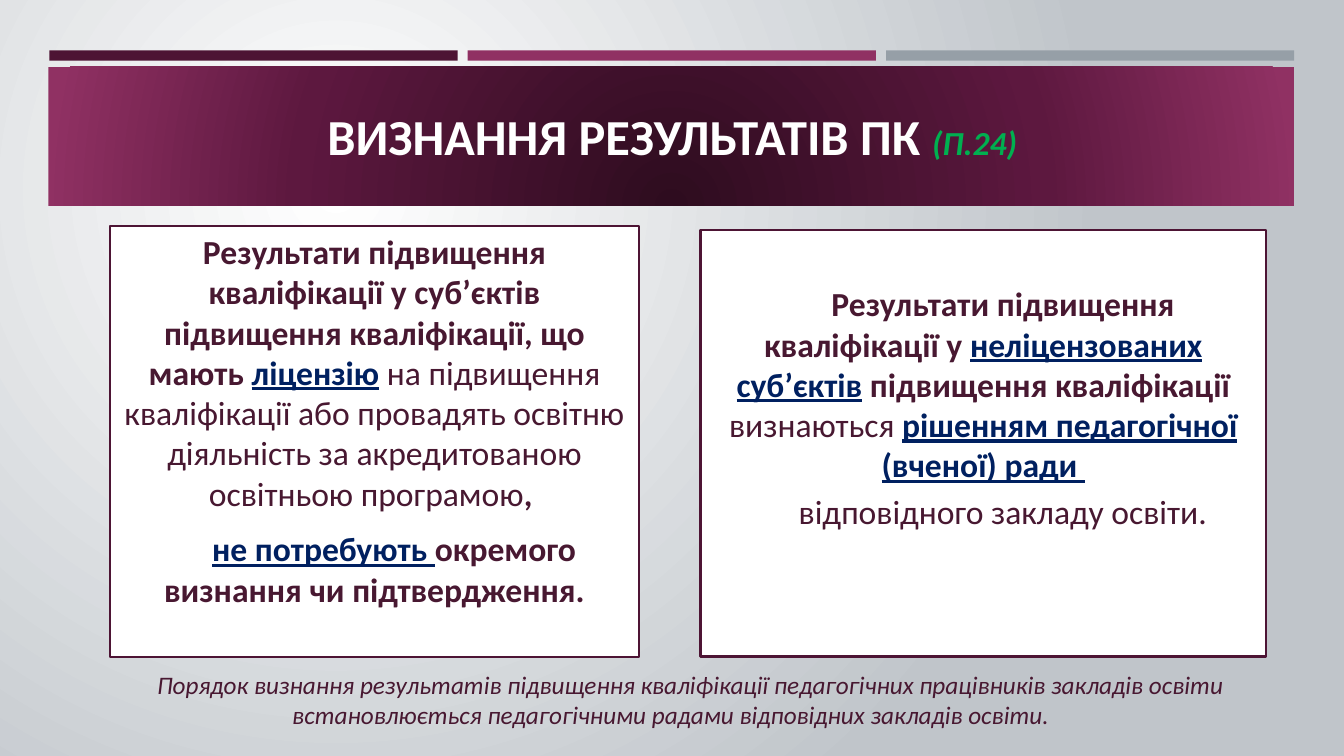
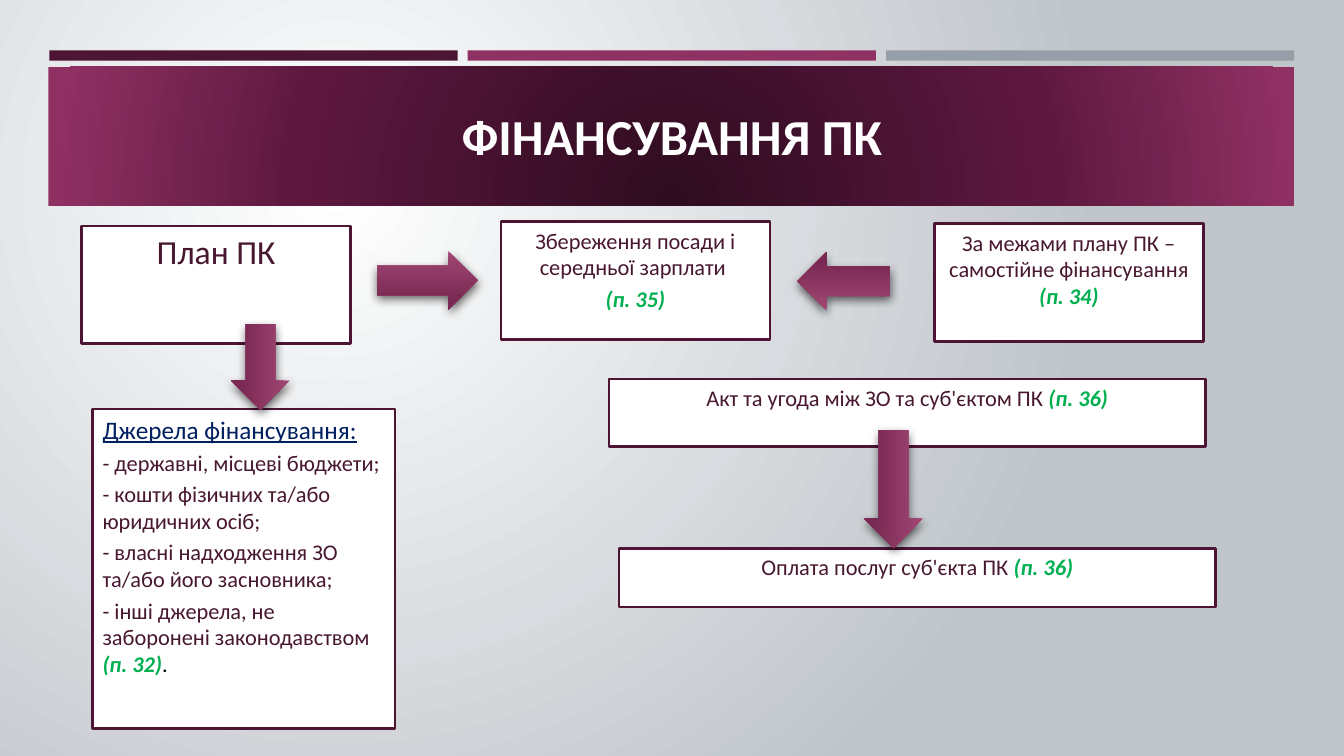
from dataclasses import dataclass

from lxml.etree import SubElement
from pptx import Presentation
from pptx.dml.color import RGBColor
from pptx.enum.shapes import MSO_SHAPE as SHAPE
from pptx.enum.text import MSO_ANCHOR as ANCHOR, PP_ALIGN as ALIGN
from pptx.oxml.ns import qn
from pptx.util import Pt

WHITE = RGBColor(0xFF, 0xFF, 0xFF)
BLACK = RGBColor(0x00, 0x00, 0x00)
SILVER = RGBColor(0xC0, 0xC5, 0xCA)
STEEL = RGBColor(0x96, 0x9F, 0xA7)
WINE = RGBColor(0x4D, 0x14, 0x34)
BERRY = RGBColor(0x90, 0x31, 0x63)
NIGHT = RGBColor(0x2E, 0x0C, 0x1F)
PLUM = RGBColor(0x5D, 0x18, 0x3F)
ROSE = RGBColor(0xA2, 0x47, 0x74)
MULBERRY = RGBColor(0x79, 0x29, 0x53)
TEXT = RGBColor(0x48, 0x18, 0x31)
NAVY = RGBColor(0x00, 0x20, 0x60)
GREEN = RGBColor(0x00, 0xB0, 0x50)


@dataclass(frozen=True)
class Ink:
    color: RGBColor
    bold: bool = False
    italic: bool = False
    underline: bool = False
    size: float = 0


PLAIN = Ink(TEXT)
BOLD = Ink(TEXT, bold=True)
ITALIC = Ink(TEXT, italic=True)
KEY = Ink(NAVY, bold=True, underline=True)
HEADING = Ink(NAVY, underline=True, size=18)
CLAUSE = Ink(GREEN, bold=True, italic=True)
TITLE = Ink(WHITE, bold=True)
TITLE_CLAUSE = Ink(GREEN, bold=True, italic=True, size=24)
PERIOD = Ink(BLACK)


class Deck:
    font = "Calibri"
    first_indent = 28

    def __init__(self):
        self.prs = Presentation()
        self.prs.slide_width, self.prs.slide_height = Pt(960), Pt(540)
        self.layout = self.prs.slide_layouts[5]
        self.slide = None
        master = self.prs.slide_master
        master.background.fill.background()
        self.gradient(master.element, [(0, WHITE), (100, SILVER)], focus=(50, 50, 100, 100))
        heading = self.layout.placeholders[0]
        heading.left, heading.top = Pt(46), Pt(57.6)
        heading.width, heading.height = Pt(868.3), Pt(77.8)
        heading.text_frame.vertical_anchor = ANCHOR.MIDDLE

    def gradient(self, holder, stops, focus=None, angle=0):
        blank = next(holder.iter(qn("a:noFill")))
        fill = blank.makeelement(qn("a:gradFill"), {"rotWithShape": "1"})
        stop_list = SubElement(fill, qn("a:gsLst"))
        for position, color in stops:
            stop = SubElement(stop_list, qn("a:gs"), pos=str(position * 1000))
            SubElement(stop, qn("a:srgbClr"), val=str(color))
        if focus:
            circle = SubElement(fill, qn("a:path"), {"path": "circle"})
            edges = {side: str(value * 1000) for side, value in zip("ltrb", focus)}
            SubElement(circle, qn("a:fillToRect"), edges)
        else:
            SubElement(fill, qn("a:lin"), ang=str(angle * 60000), scaled="0")
        blank.getparent().replace(blank, fill)

    def shape(self, kind, left, top, width, height, color=None):
        shape = self.slide.shapes.add_shape(kind, Pt(left), Pt(top), Pt(width), Pt(height))
        shape.shadow.inherit = False
        if color is None:
            shape.fill.background()
        else:
            shape.fill.solid()
            shape.fill.fore_color.rgb = color
        shape.line.fill.background()
        return shape

    def decorate_layout(self):
        parts = [
            self.shape(SHAPE.RECTANGLE, 35.28 + 298.8 * column, 36, 291.6, 7.4, color)
            for column, color in enumerate((WINE, BERRY, STEEL))
        ]
        band = self.shape(SHAPE.RECTANGLE, 34.6, 47.5, 890, 99.4)
        self.gradient(band.element, [(0, NIGHT), (60, PLUM), (100, BERRY)], focus=(50, 130, 50, -30))
        for number, part in enumerate(parts + [band], 100):
            part.element.nvSpPr.cNvPr.set("id", str(number))
            self.layout.element.cSld.spTree.append(part.element)

    def add_slide(self, *title_runs):
        first = self.slide is None
        self.slide = self.prs.slides.add_slide(self.layout)
        if first:
            self.decorate_layout()
        self.set_text(self.slide.shapes.title.text_frame, [title_runs], 36, spacing=False)

    def set_text(self, frame, paragraphs, size, align=ALIGN.CENTER, after=0, indented=(), spacing=True):
        frame.word_wrap = True
        for index, runs in enumerate(paragraphs):
            paragraph = frame.paragraphs[0] if index == 0 else frame.add_paragraph()
            paragraph.alignment = align
            if spacing:
                paragraph.space_before = Pt(size * 0.2)
                paragraph.space_after = Pt(after)
            if index in indented:
                paragraph._p.get_or_add_pPr().set("indent", str(Pt(self.first_indent)))
            for words, ink in runs:
                run = paragraph.add_run()
                run.text = words
                font = run.font
                font.name, font.size = self.font, Pt(ink.size or size)
                font.color.rgb = ink.color
                font.bold, font.italic, font.underline = ink.bold, ink.italic, ink.underline

    def box(self, left, top, width, height, paragraphs, size=16, inset=3.6, **style):
        box = self.shape(SHAPE.RECTANGLE, left, top, width, height, WHITE)
        box.line.color.rgb = WINE
        box.line.width = Pt(1.75)
        box.text_frame.vertical_anchor = ANCHOR.TOP
        box.text_frame.margin_top = Pt(inset)
        self.set_text(box.text_frame, paragraphs, size, **style)

    def note(self, left, top, width, height, paragraphs, size, **style):
        note = self.slide.shapes.add_textbox(Pt(left), Pt(top), Pt(width), Pt(height))
        self.set_text(note.text_frame, paragraphs, size, **style)

    def arrow(self, left, top, length, rotation=0):
        arrow = self.shape(SHAPE.RIGHT_ARROW, left, top, length, 42)
        arrow.rotation = rotation
        self.gradient(arrow.element, [(0, ROSE), (84, MULBERRY)], angle=90)
        effects = next(arrow.element.iter(qn("a:effectLst")))
        shadow = SubElement(
            effects, qn("a:outerShdw"), blurRad=str(Pt(7)), dist=str(Pt(3)),
            dir=str(84 * 60000), rotWithShape="0",
        )
        tint = SubElement(shadow, qn("a:srgbClr"), val=str(BLACK))
        SubElement(tint, qn("a:alpha"), val="60000")


def recognition(deck):
    deck.add_slide(("ВИЗНАННЯ РЕЗУЛЬТАТІВ ПК ", TITLE), ("(П.24)", TITLE_CLAUSE))
    deck.note(34.6, 474.5, 889.2, 51.1, [[(
        "Порядок визнання результатів підвищення кваліфікації педагогічних працівників "
        "закладів освіти встановлюється педагогічними радами відповідних закладів освіти.",
        ITALIC,
    )]], 18, indented=(0,))
    licensed = [
        [
            ("Результати підвищення кваліфікації у суб’єктів підвищення кваліфікації, що мають ", BOLD),
            ("ліцензію", KEY),
            (" на підвищення кваліфікації або провадять освітню діяльність "
             "за акредитованою освітньою програмою", PLAIN),
            (", ", BOLD),
        ],
        [("не потребують ", KEY), ("окремого визнання чи підтвердження.", BOLD)],
    ]
    deck.box(78.5, 161.3, 378, 308.2, licensed, 24, after=6, indented=(1,))
    unlicensed = [
        [
            ("Результати підвищення кваліфікації у ", BOLD),
            ("неліцензованих суб’єктів", KEY),
            (" підвищення кваліфікації", BOLD),
            (" визнаються ", PLAIN),
            ("рішенням педагогічної (вченої) ради ", KEY),
        ],
        [("відповідного закладу освіти.", PLAIN)],
    ]
    deck.box(500.4, 164.2, 403.9, 304.6, unlicensed, 24, inset=38, indented=(0, 1))


def funding(deck):
    deck.add_slide(("ФІНАНСУВАННЯ ПК", TITLE))
    plan_width, plan_height = 192.2, 84.2
    deck.box(58.3, 161.3, plan_width, plan_height, [[("План ПК", PLAIN)]], 24, after=6)
    deck.box(357.8, 158.4, plan_width, plan_height, [
        [("Збереження посади і середньої зарплати ", PLAIN)],
        [("(п. 35)", CLAUSE)],
    ])
    deck.box(667.4, 159.8, plan_width, plan_height, [
        [("За межами плану ПК – самостійне фінансування ", PLAIN), ("(п. 34)", CLAUSE)],
    ])
    deck.box(66.2, 292.3, 216, 228.2, [
        [("Джерела фінансування:", HEADING)],
        [("- державні, місцеві бюджети;", PLAIN)],
        [("- кошти фізичних та/або юридичних осіб;", PLAIN)],
        [("- власні надходження ЗО та/або його засновника;", PLAIN)],
        [("- інші джерела, не заборонені законодавством ", PLAIN), ("(п. 32)", CLAUSE), (".", PERIOD)],
    ], align=ALIGN.LEFT)
    for left, top, height, step in (
        (434.9, 270.7, 48.2, "Акт та угода між ЗО та суб'єктом ПК "),
        (442.1, 391.7, 41.8, "Оплата послуг суб'єкта ПК "),
    ):
        deck.box(left, top, 426.2, height, [[(step, PLAIN), ("(п. 36)", CLAUSE)]])
    deck.arrow(269.3, 179.3, 72)
    deck.arrow(569.5, 180, 66.2, 180)
    deck.arrow(596.2, 328.3, 84.2, 90)
    deck.arrow(155.5, 241.2, 61.2, 90)


def main():
    deck = Deck()
    recognition(deck)
    funding(deck)
    deck.prs.save("out.pptx")


if __name__ == "__main__":
    main()
